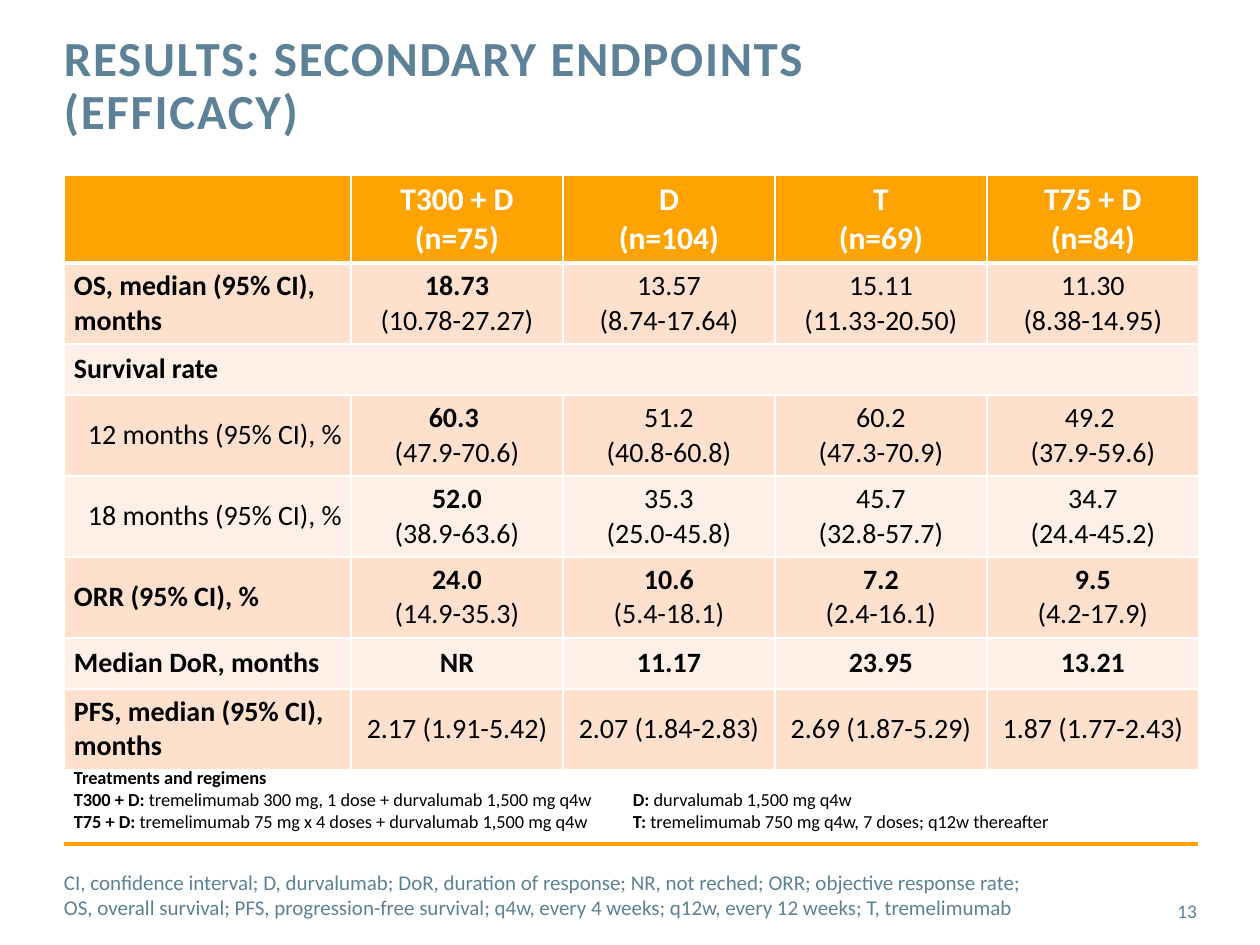
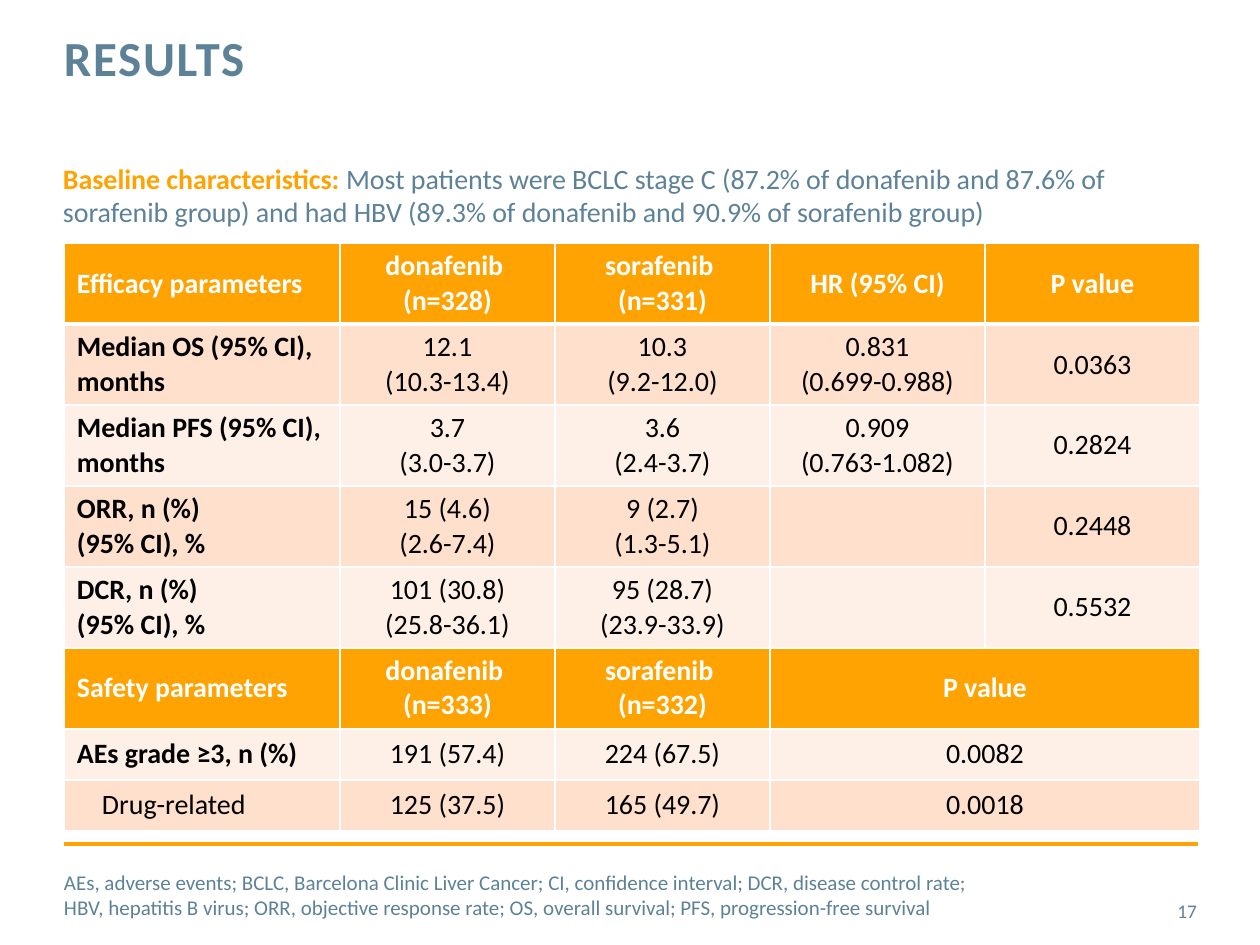
from copy import deepcopy
from dataclasses import dataclass

from lxml import etree
from pptx import Presentation
from pptx.dml.color import RGBColor
from pptx.enum.shapes import MSO_CONNECTOR
from pptx.enum.text import MSO_ANCHOR, PP_ALIGN
from pptx.oxml.ns import qn
from pptx.util import Emu, Pt

STRAIGHT = MSO_CONNECTOR.STRAIGHT
TOP, MIDDLE = MSO_ANCHOR.TOP, MSO_ANCHOR.MIDDLE
LEFT, CENTER, RIGHT = PP_ALIGN.LEFT, PP_ALIGN.CENTER, PP_ALIGN.RIGHT
EMU_PER_PX = 914400 / 126
BOLD, INDENT = "*", ">"


@dataclass(frozen=True)
class Theme:
    font: str = "Calibri"
    slate: str = "5D8298"
    orange: str = "FEA302"
    rule: str = "FFA402"
    white: str = "FFFFFF"
    black: str = "000000"
    bands: tuple = ("FFF0E7", "FFE0CC")
    title_size: float = 28
    body_size: float = 16
    abbreviation_size: float = 12
    number_size: float = 11
    regimen_size: float = 10.5


THEME = Theme()
MARGIN = 64
CONTENT_WIDTH = 1134
SHORT_ROW, TALL_ROW = 51, 81

ENDPOINTS = {
    "title": "RESULTS: SECONDARY ENDPOINTS (EFFICACY)",
    "number": "13",
    "abbreviations": (
        "CI, confidence interval; D, durvalumab; DoR, duration of response; NR, not reched; "
        "ORR; objective response rate; \v"
        "OS, overall survival; PFS, progression-free survival; q4w, every 4 weeks; "
        "q12w, every 12 weeks; T, tremelimumab"
    ),
    "abbreviations_width": 1062,
    "notes": [
        ((74, 760, 556, 79), (0, 6, 13, 6), [
            [("Treatments and regimens", True)],
            [("T300 + D: ", True),
             ("tremelimumab 300 mg, 1 dose + durvalumab 1,500 mg q4w", False)],
            [("T75 + D: ", True),
             ("tremelimumab 75 mg x 4 doses + durvalumab 1,500 mg q4w", False)],
        ], THEME.regimen_size, THEME.black),
        ((620, 782, 556, 57), (13, 6, 13, 6), [
            [("D: ", True), ("durvalumab 1,500 mg q4w", False)],
            [("T: ", True), ("tremelimumab 750 mg q4w, 7 doses; q12w thereafter", False)],
        ], THEME.regimen_size, THEME.black),
    ],
    "table": {
        "top": 175,
        "columns": (287, 212, 212, 212, 212),
        "header_rows": (0,),
        "header_size": 18,
        "header_height": 88,
        "short_rows": (2, 6),
        "label_insets": (10, 5),
        "indent": 14,
        "rows": [
            ("", "T300 + D\n(n=75)", "D\n(n=104)", "T\n(n=69)", "T75 + D\n(n=84)"),
            ("*OS, median (95% CI), months", "*18.73\n(10.78-27.27)",
             "13.57\n(8.74-17.64)", "15.11\n(11.33-20.50)", "11.30\n(8.38-14.95)"),
            ("*Survival rate", None, None, None, None),
            (">12 months (95% CI), %", "*60.3 \n(47.9-70.6)",
             "51.2\n(40.8-60.8)", "60.2\n(47.3-70.9)", "49.2 \n(37.9-59.6)"),
            (">18 months (95% CI), %", "*52.0\n(38.9-63.6)",
             "35.3\n(25.0-45.8)", "45.7\n(32.8-57.7)", "34.7\n(24.4-45.2)"),
            ("*ORR (95% CI), %", "*24.0\n(14.9-35.3)",
             "*10.6\n(5.4-18.1)", "*7.2\n(2.4-16.1)", "*9.5\n(4.2-17.9)"),
            ("*Median DoR, months", "*NR", "*11.17", "*23.95", "*13.21"),
            ("*PFS, median (95% CI), months", "2.17 (1.91-5.42)",
             "2.07 (1.84-2.83)", "2.69 (1.87-5.29)", "1.87 (1.77-2.43)"),
        ],
    },
}

DONAFENIB = {
    "title": "RESULTS",
    "number": "17",
    "abbreviations": (
        "AEs, adverse events; BCLC, Barcelona Clinic Liver Cancer; CI, confidence interval; "
        "DCR, disease control rate; \v"
        "HBV, hepatitis B virus; ORR, objective response rate; OS, overall survival; "
        "PFS, progression-free survival"
    ),
    "abbreviations_width": 1101,
    "notes": [
        ((50, 155, 1145, 81), (13, 6, 13, 6), [
            [("Baseline characteristics: ", True, THEME.orange),
             ("Most patients were BCLC stage C (87.2% of donafenib and 87.6% of sorafenib "
              "group) and had HBV (89.3% of donafenib and 90.9% of sorafenib group)", False)],
        ], THEME.body_size, THEME.slate),
    ],
    "table": {
        "top": 243,
        "columns": (276, 215, 215, 215, 215),
        "header_rows": (0, 5),
        "header_size": THEME.body_size,
        "header_height": TALL_ROW,
        "short_rows": (6, 7),
        "label_insets": (13, 13),
        "indent": 25,
        "rows": [
            ("Efficacy parameters", "donafenib \v(n=328)", "sorafenib \v(n=331)",
             "HR (95% CI)", "P value"),
            ("*Median OS (95% CI), months", "12.1\n(10.3-13.4)", "10.3\n(9.2-12.0)",
             "0.831\n(0.699-0.988)", "0.0363"),
            ("*Median PFS (95% CI), months", "3.7\n(3.0-3.7)", "3.6\n(2.4-3.7)",
             "0.909\n(0.763-1.082)", "0.2824"),
            ("*ORR, n (%)\n*(95% CI), %", "15 (4.6)\n(2.6-7.4)", "9 (2.7)\n(1.3-5.1)",
             "", "0.2448"),
            ("*DCR, n (%)\n*(95% CI), %", "101 (30.8)\n(25.8-36.1)",
             "95 (28.7)\n(23.9-33.9)", "", "0.5532"),
            ("Safety parameters", "donafenib \v(n=333)", "sorafenib \v(n=332)",
             "P value", None),
            ("*AEs grade ≥3, n (%)", "191 (57.4)", "224 (67.5)", "0.0082", None),
            (">Drug-related", "125 (37.5)", "165 (49.7)", "0.0018", None),
        ],
    },
}


def px(length):
    return Emu(round(length * EMU_PER_PX))


def apply(target, formats):
    for attribute, value in formats.items():
        setattr(target, attribute, value)


def margins(insets):
    sides = ("margin_left", "margin_top", "margin_right", "margin_bottom")
    return dict(zip(sides, map(px, insets)))


def write(paragraph, text, size, color, bold=False, spacing=0):
    for position, line in enumerate(text.split("\v")):
        if position:
            paragraph.add_line_break()
            paragraph._p[-1].append(deepcopy(run._r.rPr))
        run = paragraph.add_run()
        run.text = line
        apply(run.font, {"name": THEME.font, "size": Pt(size), "bold": bold})
        run.font.color.rgb = RGBColor.from_string(color)
        if spacing:
            run._r.rPr.set("spc", str(spacing))


def paragraphs_of(frame, entries):
    for position, entry in enumerate(entries):
        yield (frame.add_paragraph() if position else frame.paragraphs[0]), entry


def add_text(slide, box, entries, size, color, insets=(0, 0, 0, 0), anchor=TOP,
             align=LEFT, line_spacing=None, spacing=0):
    frame = slide.shapes.add_textbox(*map(px, box)).text_frame
    apply(frame, {"word_wrap": True, "vertical_anchor": anchor, **margins(insets)})
    for paragraph, runs in paragraphs_of(frame, entries):
        apply(paragraph, {"alignment": align, "line_spacing": line_spacing})
        for text, bold, *own_color in runs:
            write(paragraph, text, size, own_color[0] if own_color else color, bold, spacing)


def add_border(cell, side, points):
    border = etree.Element(qn(f"a:ln{side}"), w=str(Pt(points)))
    fill = etree.SubElement(border, qn("a:solidFill"))
    etree.SubElement(fill, qn("a:srgbClr"), val=THEME.white)
    return border


def style_cell(cell, row, fill):
    cell.fill.solid()
    cell.fill.fore_color.rgb = RGBColor.from_string(fill)
    widths = {"L": 1, "R": 1, "T": 3 if row == 1 else 1, "B": 3 if row == 0 else 1}
    for position, (side, points) in enumerate(widths.items()):
        cell._tc.tcPr.insert(position, add_border(cell, side, points))


def fill_cell(cell, text, is_label, is_header, spec):
    left, right = spec["label_insets"] if is_label else (13, 13)
    apply(cell, {"vertical_anchor": MIDDLE, **margins((left, 6, right, 6))})
    size = spec["header_size"] if is_header else THEME.body_size
    color = THEME.white if is_header else THEME.black
    for paragraph, line in paragraphs_of(cell.text_frame, text.split("\n")):
        paragraph.alignment = LEFT if is_label else CENTER
        if line.startswith(INDENT):
            apply_indent = paragraph._p.get_or_add_pPr().set
            apply_indent("marL", str(px(spec["indent"])))
            apply_indent("indent", "0")
        if line:
            bold = is_header or line.startswith(BOLD)
            write(paragraph, line.lstrip(BOLD + INDENT), size, color, bold)


def row_height(row, spec):
    if row in spec["header_rows"]:
        return spec["header_height"]
    return SHORT_ROW if row in spec["short_rows"] else TALL_ROW


def add_results(slide, spec):
    rows, columns = spec["rows"], spec["columns"]
    heights = [row_height(row, spec) for row in range(len(rows))]
    box = (MARGIN, spec["top"], sum(columns), sum(heights))
    table = slide.shapes.add_table(len(rows), len(columns), *map(px, box)).table
    apply(table, {"first_row": True, "horz_banding": False})
    for column, width in zip(table.columns, columns):
        column.width = px(width)
    for row, values in enumerate(rows):
        table.rows[row].height = px(heights[row])
        is_header = row in spec["header_rows"]
        fill = THEME.orange if is_header else THEME.bands[row % 2]
        for column, text in enumerate(values):
            cell = table.cell(row, column)
            if text is not None:
                fill_cell(cell, text, column == 0, is_header, spec)
            style_cell(cell, row, fill)
        if None in values:
            table.cell(row, values.index(None) - 1).merge(table.cell(row, len(columns) - 1))


def add_frame(slide, content):
    rule_y = px(844)
    rule = slide.shapes.add_connector(
        STRAIGHT, px(MARGIN), rule_y, px(MARGIN + CONTENT_WIDTH), rule_y)
    rule.line.color.rgb = RGBColor.from_string(THEME.rule)
    rule.line.width = Pt(2)
    etree.SubElement(rule._element.spPr, qn("a:effectLst"))
    add_text(slide, (1116, 886, 81, 50), [[(content["number"], False)]],
             THEME.number_size, THEME.slate, anchor=MIDDLE, align=RIGHT)
    add_text(slide, (MARGIN, 34, 903, 111), [[(content["title"], True)]],
             THEME.title_size, THEME.slate, line_spacing=Pt(30), spacing=100)
    add_text(slide, (MARGIN, 870, content["abbreviations_width"], 50),
             [[(content["abbreviations"], False)]],
             THEME.abbreviation_size, THEME.slate, anchor=MIDDLE)


def main():
    deck = Presentation()
    apply(deck, {"slide_width": px(1260), "slide_height": px(945)})
    for content in (ENDPOINTS, DONAFENIB):
        slide = deck.slides.add_slide(deck.slide_layouts[6])
        add_frame(slide, content)
        add_results(slide, content["table"])
        for box, insets, entries, size, color in content["notes"]:
            add_text(slide, box, entries, size, color, insets)
    deck.save("out.pptx")


if __name__ == "__main__":
    main()
